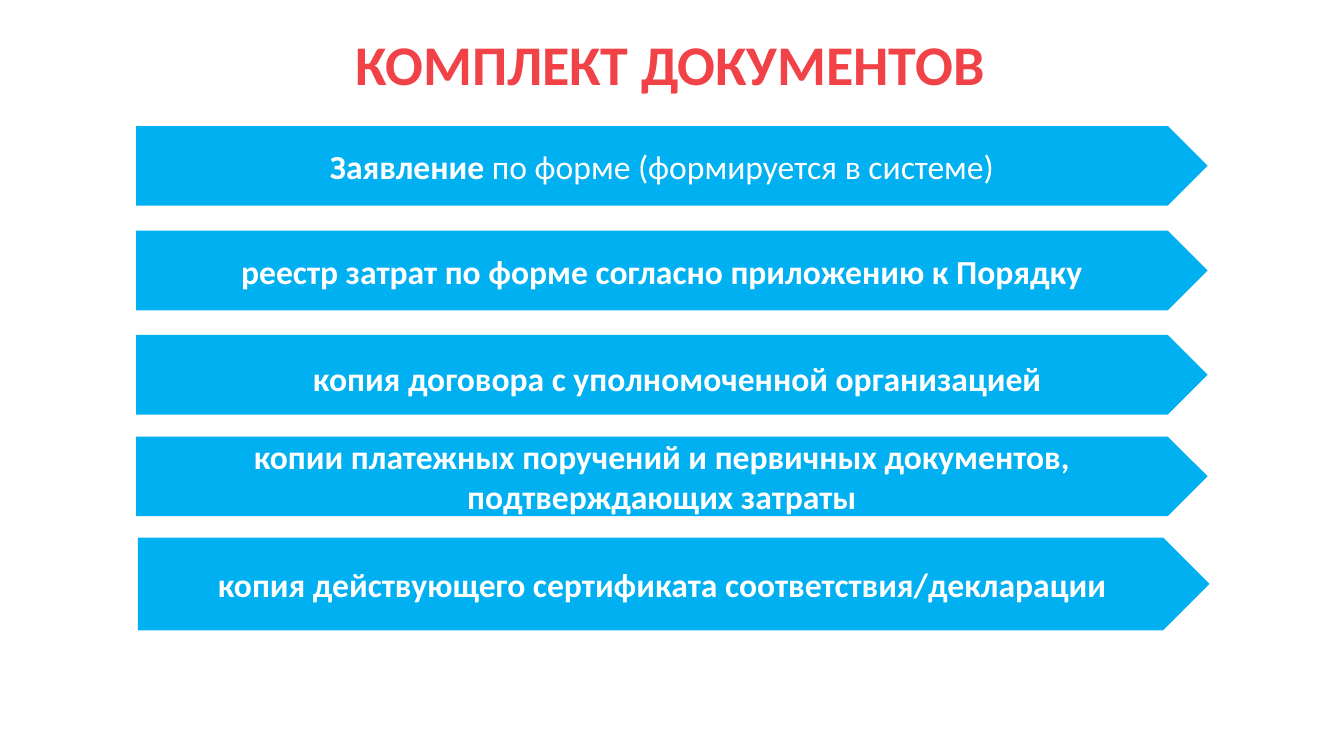
from pptx import Presentation
from pptx.dml.color import RGBColor
from pptx.enum.shapes import MSO_SHAPE
from pptx.enum.text import MSO_ANCHOR, MSO_AUTO_SIZE, PP_ALIGN
from pptx.util import Pt

COLORS = {"title": "F04247", "arrow": "00B0F0", "text": "FFFFFF"}
FONT = "Calibri"

ARROW_LEFT, ARROW_WIDTH, ARROW_HEIGHT = 97.2, 765.4, 56.9
# Each arrow: top, runs of (text, bold), then any differences in box or paragraph
ARROWS = [
    (90, [("Заявление", True), (" по форме (формируется в системе)", False)], {}),
    (164.8, [("реестр затрат по форме согласно приложению к Порядку", True)], {}),
    (239.2, [("копия договора с уполномоченной организацией ", True)],
     {"first_indent": 27.4, "line_spacing": 1.15, "space_after": 10}),
    (311.8, [("копии платежных поручений и первичных документов, "
              "подтверждающих затраты", True)], {}),
    (384, [("копия действующего сертификата соответствия/декларации", True)],
     {"left": 98.6, "height": 66.2}),
]


def write_text(shape, runs, size, color, line_spacing=None, space_after=None,
               first_indent=None):
    frame = shape.text_frame
    frame.word_wrap = True
    frame.auto_size = MSO_AUTO_SIZE.NONE
    frame.vertical_anchor = MSO_ANCHOR.MIDDLE
    paragraph = frame.paragraphs[0]
    paragraph.alignment = PP_ALIGN.CENTER
    if line_spacing is not None:
        paragraph.line_spacing = line_spacing
    if space_after is not None:
        paragraph.space_after = Pt(space_after)
    if first_indent is not None:
        properties = paragraph._p.get_or_add_pPr()
        properties.set("marL", "0")
        properties.set("indent", str(Pt(first_indent)))
    for text, bold in runs:
        run = paragraph.add_run()
        run.text = text
        run.font.name = FONT
        run.font.size = Pt(size)
        run.font.bold = bold
        run.font.color.rgb = RGBColor.from_string(COLORS[color])


def add_title(slide, left, top, width, height):
    title = slide.shapes.title
    title.left, title.top = Pt(left), Pt(top)
    title.width, title.height = Pt(width), Pt(height)
    write_text(title, [("КОМПЛЕКТ ДОКУМЕНТОВ", True)], size=40, color="title",
               line_spacing=0.96)


def add_arrow(slide, top, runs, left=ARROW_LEFT, width=ARROW_WIDTH,
              height=ARROW_HEIGHT, **text_format):
    arrow = slide.shapes.add_shape(MSO_SHAPE.PENTAGON, Pt(left), Pt(top),
                                   Pt(width), Pt(height))
    arrow.shadow.inherit = False
    arrow.fill.solid()
    arrow.fill.fore_color.rgb = RGBColor.from_string(COLORS["arrow"])
    arrow.line.fill.background()
    write_text(arrow, runs, size=24, color="text", **text_format)


def main():
    presentation = Presentation()
    presentation.slide_width, presentation.slide_height = Pt(960), Pt(540)
    slide = presentation.slides.add_slide(presentation.slide_layouts[5])

    # Heading
    add_title(slide, -1.4, -4.3, 960, 103)

    # Document list
    for top, runs, differences in ARROWS:
        add_arrow(slide, top, runs, **differences)

    presentation.save("out.pptx")


if __name__ == "__main__":
    main()
